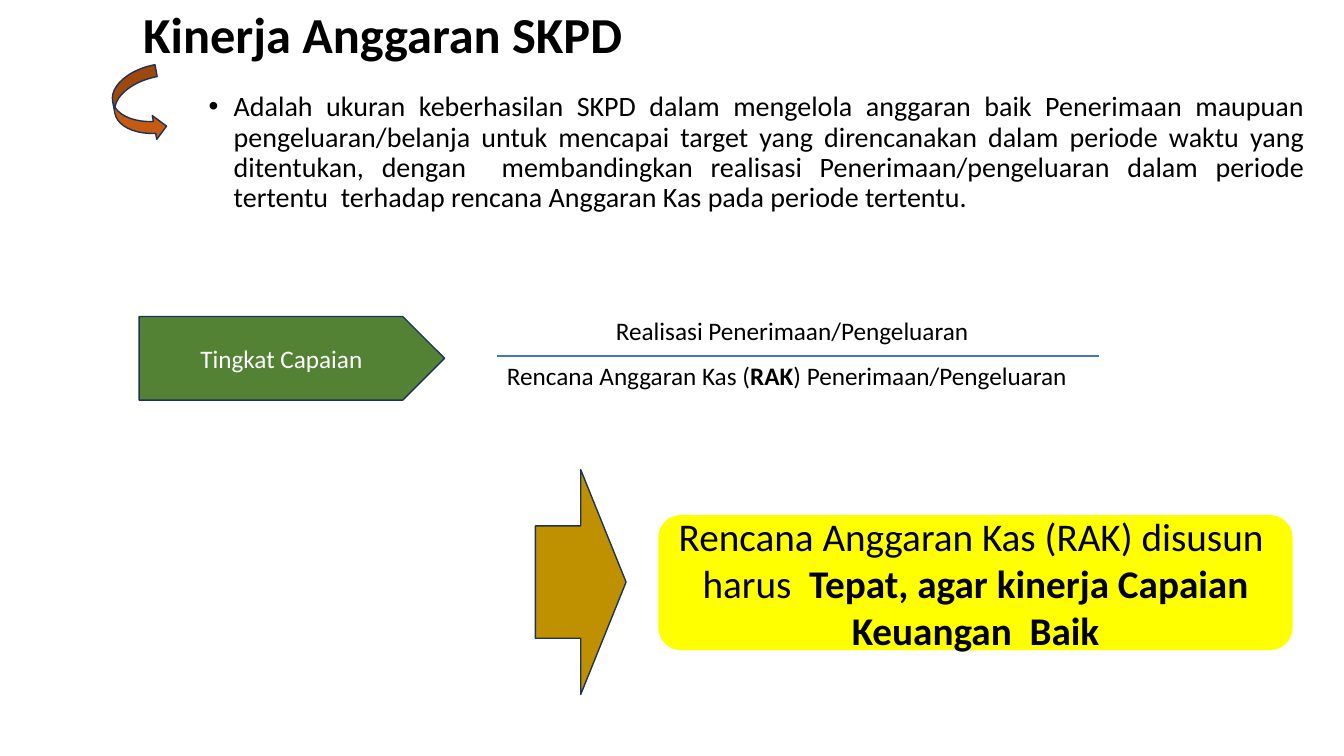
from lxml import etree
from pptx import Presentation
from pptx import util as u
from pptx.dml import color
from pptx.enum import shapes, text
from pptx.oxml import ns

SHAPE = shapes.MSO_SHAPE
ALIGN = text.PP_ALIGN
MID = text.MSO_ANCHOR.MIDDLE
TOP = text.MSO_ANCHOR.TOP
EDGE = "1E3256"


def rgb(code):
    return color.RGBColor.from_string(code)


def box(left, top, width, height):
    return [u.Inches(n) for n in (left, top, width, height)]


def write(shape, runs, size, hue="000000", wrap=True, anchor=MID, **form):
    """Fill one paragraph with (words, bold) runs; form holds its format."""
    frame = shape.text_frame
    frame.auto_size = text.MSO_AUTO_SIZE.NONE
    frame.word_wrap = wrap
    frame.vertical_anchor = anchor
    para = frame.paragraphs[0]
    for key, value in form.items():
        setattr(para, key, value)
    for words, bold in runs:
        run = para.add_run()
        run.text = words
        look = {"name": "Calibri", "size": u.Pt(size), "bold": bold}
        for key, value in look.items():
            setattr(run.font, key, value)
        run.font.color.rgb = rgb(hue)
    return para


def bullet(para, indent):
    props = para._p.get_or_add_pPr()
    props.set("marL", str(u.Inches(indent)))
    props.set("indent", str(-u.Inches(indent)))
    font = etree.SubElement(props, ns.qn("a:buFont"))
    font.set("typeface", "Arial")
    mark = etree.SubElement(props, ns.qn("a:buChar"))
    mark.set("char", "•")


def label(slide, place, runs, size, **form):
    area = slide.shapes.add_textbox(*box(*place))
    return write(area, runs, size, anchor=TOP, **form)


def block(slide, kind, place, fill, edge=None, turn=0):
    shape = slide.shapes.add_shape(kind, *box(*place))
    shape.shadow.inherit = False
    shape.rotation = turn
    shape.fill.solid()
    shape.fill.fore_color.rgb = rgb(fill)
    if edge:
        shape.line.color.rgb = rgb(edge)
        shape.line.width = u.Pt(1)
    else:
        shape.line.fill.background()
    return shape


def rule(slide, left, right, top, hue, width):
    line = slide.shapes.add_connector(
        shapes.MSO_CONNECTOR.STRAIGHT,
        u.Inches(left), u.Inches(top), u.Inches(right), u.Inches(top))
    line.line.color.rgb = rgb(hue)
    line.line.width = u.Pt(width)
    etree.SubElement(line._element.spPr, ns.qn("a:effectLst"))


def main():
    deck = Presentation()
    deck.slide_width = u.Inches(13.33)
    deck.slide_height = u.Inches(7.5)
    slide = deck.slides.add_slide(deck.slide_layouts[5])

    title = slide.shapes.title
    title.left, title.top, title.width, title.height = box(
        1.32, 0.04, 11.5, 0.65)
    write(title, [("Kinerja Anggaran SKPD", True)], 36,
          alignment=ALIGN.LEFT, line_spacing=0.9)

    para = label(slide, (1.97, 0.87, 11.07, 1.48), [(
        "Adalah ukuran keberhasilan SKPD dalam mengelola anggaran baik "
        "Penerimaan maupuan pengeluaran/belanja untuk mencapai target yang "
        "direncanakan dalam periode waktu yang ditentukan, dengan  "
        "membandingkan realisasi Penerimaan/pengeluaran dalam periode "
        "tertentu  terhadap rencana Anggaran Kas pada periode tertentu.",
        False)], 20, alignment=ALIGN.JUSTIFY, line_spacing=0.9,
        space_before=u.Pt(10))
    bullet(para, 0.25)

    block(slide, SHAPE.CURVED_RIGHT_ARROW, (1.13, 0.68, 0.48, 0.74),
          "C55A11", EDGE, 349.3)
    level = block(slide, SHAPE.PENTAGON, (1.38, 3.14, 3.03, 0.83),
                  "548235", EDGE)
    write(level, [("Tingkat Capaian", False)], 18, "FFFFFF",
          alignment=ALIGN.CENTER)

    label(slide, (6.01, 3.08, 3.79, 0.4),
          [("Realisasi Penerimaan/Pengeluaran", False)], 18, wrap=False)
    label(slide, (4.93, 3.53, 5.82, 0.4),
          [("Rencana Anggaran Kas (", False), ("RAK", True),
           (") Penerimaan/Pengeluaran", False)], 18, wrap=False)
    rule(slide, 4.93, 10.9, 3.53, "4472C4", 1.5)

    advice = block(slide, SHAPE.ROUNDED_RECTANGLE, (6.53, 5.11, 6.29, 1.34),
                   "FFFF00")
    write(advice, [("Rencana Anggaran Kas (RAK) disusun  harus  ", False),
                   ("Tepat, agar kinerja Capaian Keuangan  Baik", True)],
          28, alignment=ALIGN.CENTER)
    block(slide, SHAPE.RIGHT_ARROW, (5.31, 4.66, 0.9, 2.23), "BF9000", EDGE)

    deck.save("out.pptx")


if __name__ == "__main__":
    main()
